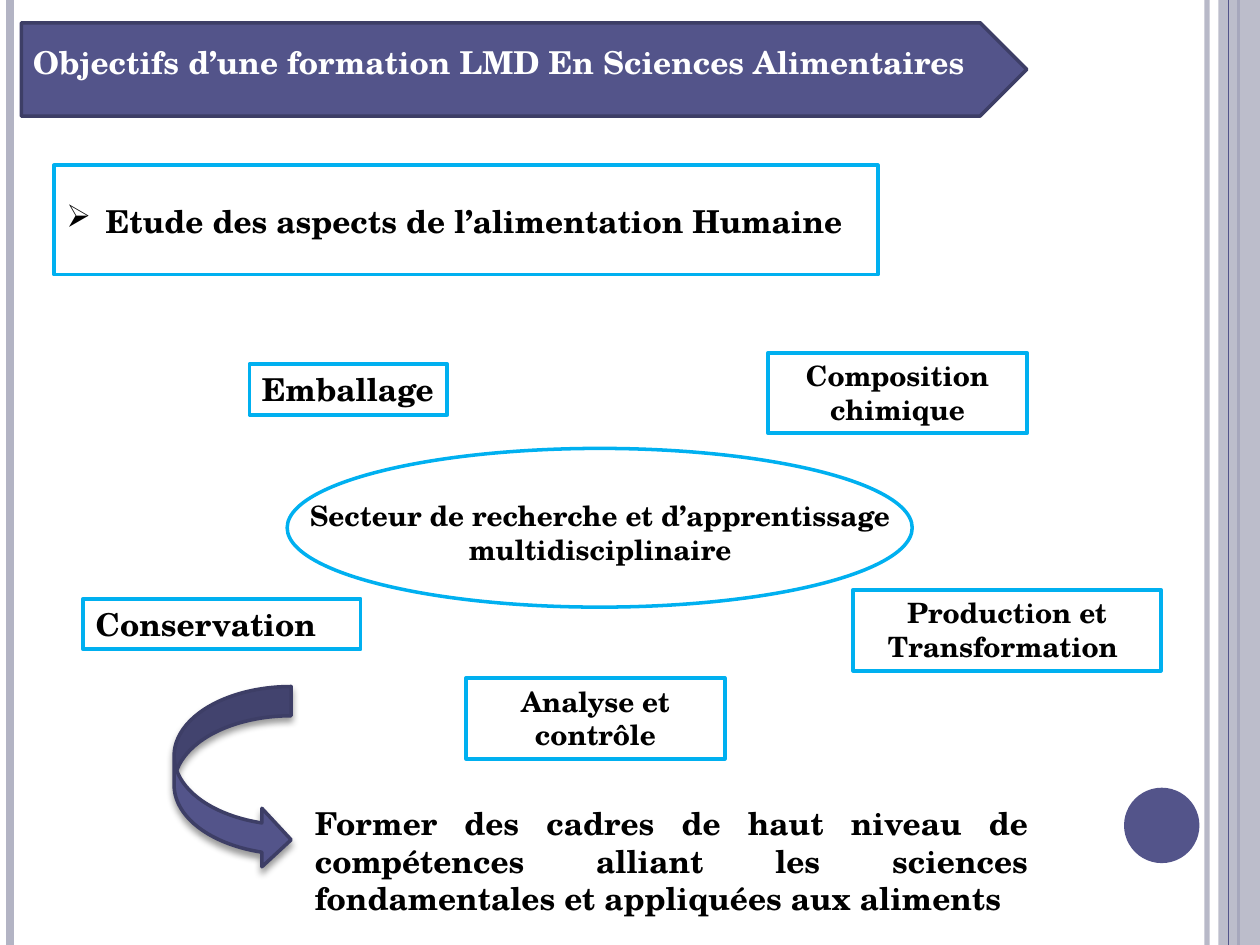
from lxml import etree
from pptx import Presentation
from pptx import util as u
from pptx.dml.color import RGBColor
from pptx.enum import shapes, text
from pptx.oxml.ns import qn

FONT = "TeX Gyre Schola"
COLORS = {"indigo": "53548A", "dark": "3D3E66", "lilac": "B3B4C4",
          "sky": "00B0F0", "black": "000000", "white": "FFFFFF"}
KIND = shapes.MSO_SHAPE
LEFT, CENTER, JUSTIFY = (text.PP_ALIGN.LEFT, text.PP_ALIGN.CENTER,
                         text.PP_ALIGN.JUSTIFY)
PAGE_WIDTH, PAGE_HEIGHT = 25.4, 19.05

# All positions are (left, top, width, height) in cm.
TITLE = "Objectifs d’une formation LMD En Sciences Alimentaires"
TITLE_AT = (0.41, 0.74, 19.91, 1.02)
BANNER_AT = (0.43, 0.46, 20.27, 1.88)
BAND_AT = (24.56, 0, 0.84, PAGE_HEIGHT)
DISC_AT = (22.66, 15.88, 1.52, 1.52)
ARROW_AT = (3.51, 13.84, 2.36, 3.68)

# x, colour, width in points, opacity in percent
RULES_BEHIND = [(24.33, "lilac", 3, 93), (0.2, "lilac", 4.5, 100),
                (24.97, "indigo", 1.5, 100)]
RULE_ON_BAND = (24.77, "indigo", 0.75, 100)

OUTLINES = [(KIND.OVAL, (5.79, 9.04, 12.6, 3.2)),
            (KIND.RECTANGLE, (1.09, 3.33, 16.61, 2.21))]

TOPIC = ("Etude des aspects de l’alimentation Humaine",
         (1.09, 3.94, 18.8, 1.02), 18, LEFT)
SECTOR = ("Secteur de recherche et d’apprentissage multidisciplinaire",
          (4.9, 9.93, 14.4, 1.63), 16, CENTER)
GOAL = ("Former des cadres de haut niveau de compétences alliant les sciences "
        "fondamentales et appliquées aux aliments",
        (6.1, 16.08, 14.88, 2.57), 18, JUSTIFY)
FIELDS = [
    ("Composition chimique", (15.49, 7.11, 5.21, 1.63), 16, CENTER),
    ("Production et Transformation ", (17.2, 11.89, 6.2, 1.63), 16, CENTER),
    ("Conservation", (1.68, 12.07, 5.59, 1.02), 18, LEFT),
    ("Emballage", (5.03, 7.34, 3.99, 1.02), 18, LEFT),
    ("Analyse et contrôle", (9.4, 13.67, 5.21, 1.63), 16, CENTER),
]


def rgb(name):
    return RGBColor.from_string(COLORS[name])


def place(at):
    return [u.Cm(value) for value in at]


def set_opacity(color_element, percent):
    etree.SubElement(color_element, qn("a:alpha"), val=str(percent * 1000))


def add_rule(page, x, color, width, opacity):
    rule = page.shapes.add_connector(shapes.MSO_CONNECTOR.STRAIGHT, u.Cm(x), 0,
                                     u.Cm(x), u.Cm(PAGE_HEIGHT))
    rule.line.color.rgb = rgb(color)
    rule.line.width = u.Pt(width)
    if opacity < 100:
        set_opacity(next(rule.element.iter(qn("a:srgbClr"))), opacity)
    etree.SubElement(rule.element.spPr, qn("a:effectLst"))


def add_figure(page, kind, at, fill=None, line=None, width=2):
    figure = page.shapes.add_shape(kind, *place(at))
    figure.shadow.inherit = False
    if fill:
        figure.fill.solid()
        figure.fill.fore_color.rgb = rgb(fill)
    else:
        figure.fill.background()
    if line:
        figure.line.color.rgb = rgb(line)
        figure.line.width = u.Pt(width)
    else:
        figure.line.fill.background()
    return figure


def write(shape, words, size, align, color="black"):
    frame = shape.text_frame
    frame.text = words
    frame.word_wrap = True
    frame.auto_size = text.MSO_AUTO_SIZE.NONE
    frame.vertical_anchor = text.MSO_ANCHOR.TOP
    para = frame.paragraphs[0]
    para.alignment = align
    font = para.runs[0].font
    font.name, font.size, font.bold = FONT, u.Pt(size), True
    font.color.rgb = rgb(color)
    return para


def add_label(page, words, at, size, align):
    return write(page.shapes.add_textbox(*place(at)), words, size, align)


def add_bullet(para, mark, indent):
    props = para._p.get_or_add_pPr()
    props.set("marL", str(u.Cm(indent)))
    props.set("indent", str(-u.Cm(indent)))
    etree.SubElement(props, qn("a:buChar"), char=mark)


def add_soft_shadow(shape):
    effects = shape.element.spPr.find(qn("a:effectLst"))
    shadow = etree.SubElement(effects, qn("a:outerShdw"), blurRad=str(u.Pt(4)),
                              dist=str(u.Pt(3)), dir="5400000", rotWithShape="0")
    color = etree.SubElement(shadow, qn("a:srgbClr"), val=COLORS["black"])
    set_opacity(color, 40)


def main():
    deck = Presentation()
    deck.slide_width, deck.slide_height = u.Cm(PAGE_WIDTH), u.Cm(PAGE_HEIGHT)
    page = deck.slides.add_slide(deck.slide_layouts[5])

    for rule in RULES_BEHIND:
        add_rule(page, *rule)
    band = add_figure(page, KIND.RECTANGLE, BAND_AT, "lilac")
    set_opacity(next(band.element.spPr.iter(qn("a:srgbClr"))), 87)
    add_rule(page, *RULE_ON_BAND)
    add_figure(page, KIND.OVAL, DISC_AT, "indigo")

    banner = add_figure(page, KIND.PENTAGON, BANNER_AT, "indigo", "dark")
    title = page.shapes.title
    title.left, title.top, title.width, title.height = place(TITLE_AT)
    write(title, TITLE, 18, LEFT, "white")
    banner.element.addnext(title.element)

    add_bullet(add_label(page, *TOPIC), "➢", 0.79)
    add_label(page, *SECTOR)
    for kind, at in OUTLINES:
        add_figure(page, kind, at, line="sky")
    for words, at, size, align in FIELDS:
        field = add_figure(page, KIND.RECTANGLE, at, line="sky", width=2.25)
        write(field, words, size, align)

    arrow = add_figure(page, KIND.CURVED_RIGHT_ARROW, ARROW_AT, "indigo", "dark")
    add_soft_shadow(arrow)
    add_label(page, *GOAL)
    deck.save("out.pptx")


if __name__ == "__main__":
    main()
